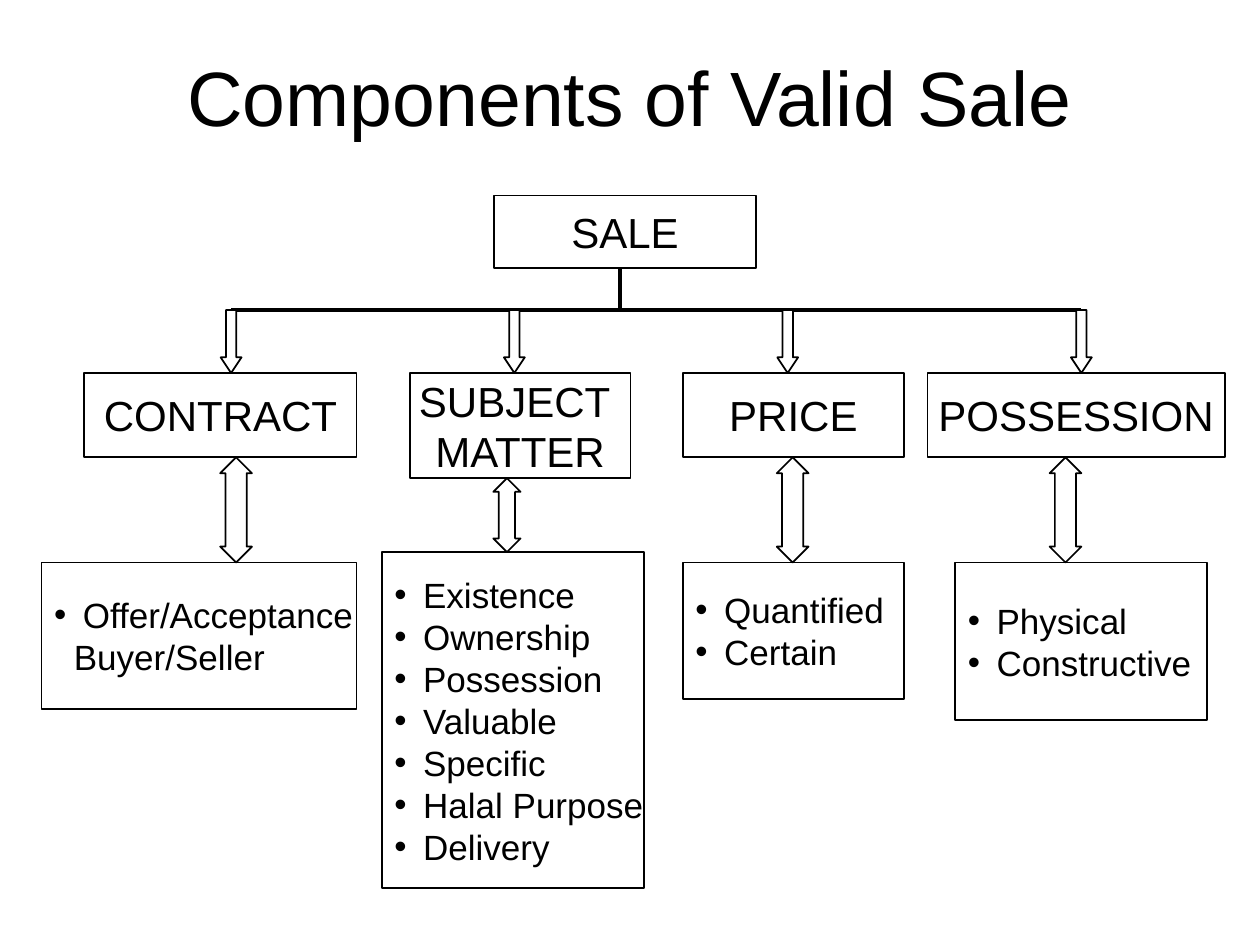
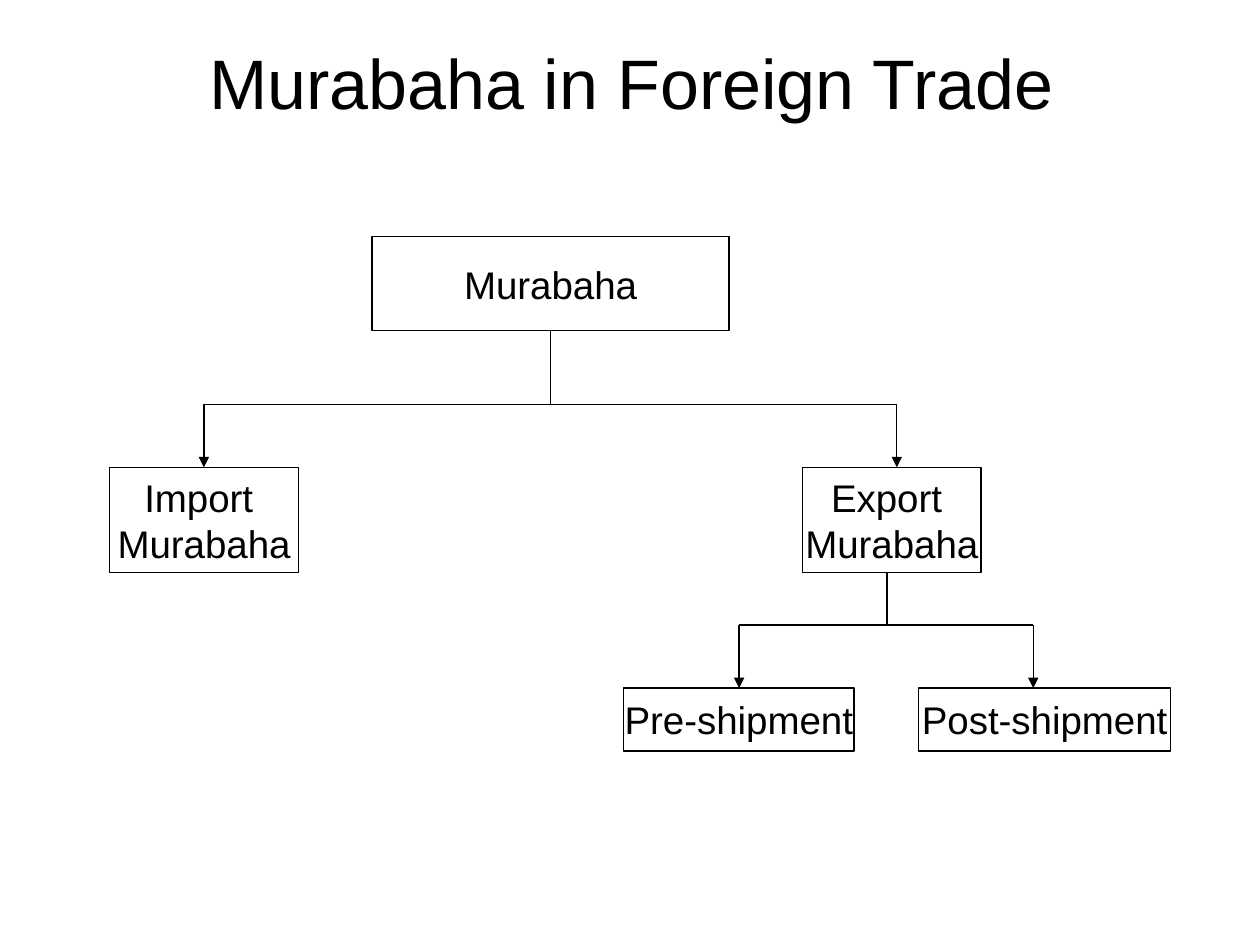
from dataclasses import dataclass
from typing import NamedTuple

from lxml import etree
from pptx import Presentation
from pptx import util as u
from pptx.dml.color import RGBColor
from pptx.enum import shapes, text
from pptx.oxml import ns


@dataclass(frozen=True)
class Theme:
    font: str = "Arial"
    ink: RGBColor = RGBColor(0, 0, 0)
    paper: RGBColor = RGBColor(255, 255, 255)
    part_size: float = 24
    detail_size: float = 20
    trade_size: float = 22
    thin: float = 0.75
    outline: float = 1
    thick: float = 2.5


THEME = Theme()


class Box(NamedTuple):
    """A place on the slide, in centimetres."""
    left: float
    top: float
    width: float
    height: float

    @property
    def bottom(self) -> float:
        return self.top + self.height

    @property
    def lengths(self) -> list:
        return [u.Cm(value) for value in self]


class Item(NamedTuple):
    text: str
    bullet: bool = True


class Component(NamedTuple):
    heading: list[str]
    heading_box: Box
    drop_x: float
    details: list[Item]
    detail_box: Box
    link_x: float
    link_width: float = 0.64
    link_head: float = 0.667


class Branch(NamedTuple):
    lines: list[str]
    box: Box
    drop_x: float


# Text and drawing helpers
def write(frame, lines, *, size: float, align=text.PP_ALIGN.CENTER,
          wrap: bool = False, left_inset: float = 0) -> None:
    """Fill a text frame with plain lines or list items."""
    frame.word_wrap = wrap
    frame.vertical_anchor = text.MSO_ANCHOR.MIDDLE
    frame.margin_left = u.Cm(left_inset)
    frame.margin_right = frame.margin_top = frame.margin_bottom = 0
    for number, line in enumerate(lines):
        paragraph = frame.add_paragraph() if number else frame.paragraphs[0]
        paragraph.alignment = align
        if isinstance(line, Item):
            indent(paragraph, line.bullet)
            line = line.text
        run = paragraph.add_run()
        run.text = line
        run.font.name = THEME.font
        run.font.size = u.Pt(size)
        run.font.color.rgb = THEME.ink


def indent(paragraph, bullet: bool) -> None:
    """Hang a list item behind its bullet, or set in a line without one."""
    properties = paragraph._p.get_or_add_pPr()
    margin = u.Cm(0.58 if bullet else 0.4)
    properties.set("marL", str(int(margin)))
    properties.set("indent", str(-int(margin) if bullet else 0))
    if bullet:
        etree.SubElement(properties, ns.qn("a:buFont"), typeface=THEME.font)
        etree.SubElement(properties, ns.qn("a:buChar"), char="•")


def draw_shape(slide, kind, box: Box, line_width: float = THEME.outline):
    shape = slide.shapes.add_shape(kind, *box.lengths)
    shape.shadow.inherit = False
    shape.fill.solid()
    shape.fill.fore_color.rgb = THEME.paper
    shape.line.color.rgb = THEME.ink
    shape.line.width = u.Pt(line_width)
    return shape


def draw_box(slide, box: Box, lines, line_width: float = THEME.outline,
             **text_format) -> None:
    shape = draw_shape(slide, shapes.MSO_SHAPE.RECTANGLE, box, line_width)
    write(shape.text_frame, lines, **text_format)


def draw_arrow(slide, kind, center: float, top: float, bottom: float,
               width: float, head: float) -> None:
    arrow = draw_shape(slide, kind, Box(center - width / 2, top, width, bottom - top))
    arrow.adjustments[0] = 0.5
    arrow.adjustments[1] = head


def draw_line(slide, x1: float, y1: float, x2: float, y2: float,
              width: float = THEME.thin, arrow: bool = False) -> None:
    line = slide.shapes.add_connector(
        shapes.MSO_CONNECTOR.STRAIGHT, *(u.Cm(v) for v in (x1, y1, x2, y2)))
    line.line.color.rgb = THEME.ink
    line.line.width = u.Pt(width)
    if arrow:
        etree.SubElement(line.line._get_or_add_ln(), ns.qn("a:tailEnd"), type="triangle")
    etree.SubElement(line._element.spPr, ns.qn("a:effectLst"))


def add_titled_slide(deck, title: str, box: Box, size: float):
    slide = deck.slides.add_slide(deck.slide_layouts[6])
    heading = slide.shapes.add_textbox(*box.lengths)
    write(heading.text_frame, [title], size=size, wrap=True)
    return slide


# Slide 1: the four components of a sale
HEAD_TOP = 7.52
DETAIL_TOP = 11.34
COMPONENTS = [
    Component(["CONTRACT"], Box(1.7, HEAD_TOP, 5.49, 1.7), 4.66,
              [Item("Offer/Acceptance"), Item("Buyer/Seller", bullet=False)],
              Box(0.84, DETAIL_TOP, 6.35, 2.96), 4.76),
    Component(["SUBJECT ", "MATTER"], Box(8.26, HEAD_TOP, 4.45, 2.12), 10.37,
              [Item(name) for name in ("Existence", "Ownership", "Possession", "Valuable",
                                       "Specific", "Halal Purpose", "Delivery")],
              Box(7.7, 11.13, 5.28, 6.78), 10.22, link_width=0.55, link_head=0.6),
    Component(["PRICE"], Box(13.77, HEAD_TOP, 4.45, 1.7), 15.88,
              [Item("Quantified"), Item("Certain")],
              Box(13.77, DETAIL_TOP, 4.45, 2.75), 15.98),
    Component(["POSSESSION"], Box(18.7, HEAD_TOP, 5.99, 1.7), 21.8,
              [Item("Physical"), Item("Constructive")],
              Box(19.26, DETAIL_TOP, 5.08, 3.18), 21.48),
]


def build_components(deck) -> None:
    slide = add_titled_slide(deck, "Components of Valid Sale",
                             Box(1.27, 0.33, 22.86, 3.18), 44)
    sale = Box(9.96, 3.94, 5.28, 1.47)
    rail_y, trunk_x = 6.25, 12.5
    draw_box(slide, sale, ["SALE"], size=THEME.part_size)
    draw_line(slide, trunk_x, sale.bottom, trunk_x, rail_y, THEME.thick)
    draw_line(slide, COMPONENTS[0].drop_x, rail_y, COMPONENTS[-1].drop_x, rail_y, THEME.thick)
    for part in COMPONENTS:
        draw_box(slide, part.heading_box, part.heading, size=THEME.part_size)
        draw_box(slide, part.detail_box, part.details, size=THEME.detail_size,
                 align=text.PP_ALIGN.LEFT, wrap=True, left_inset=0.25)
        draw_arrow(slide, shapes.MSO_SHAPE.DOWN_ARROW, part.drop_x,
                   rail_y, part.heading_box.top, 0.42, 0.75)
        draw_arrow(slide, shapes.MSO_SHAPE.UP_DOWN_ARROW, part.link_x,
                   part.heading_box.bottom, part.detail_box.top,
                   part.link_width, part.link_head)


# Slide 2: the tree of foreign trade
def draw_fork(slide, trunk_x: float, trunk_top: float, rail_y: float,
              branches: list[Branch]) -> None:
    draw_line(slide, trunk_x, trunk_top, trunk_x, rail_y)
    draw_line(slide, branches[0].drop_x, rail_y, branches[-1].drop_x, rail_y)
    for branch in branches:
        draw_box(slide, branch.box, branch.lines, THEME.thin, size=THEME.trade_size)
        draw_line(slide, branch.drop_x, rail_y, branch.drop_x, branch.box.top, arrow=True)


def build_foreign_trade(deck) -> None:
    slide = add_titled_slide(deck, "Murabaha in Foreign Trade",
                             Box(1.5, 0.53, 22.45, 2.21), 40)
    murabaha = Box(7.5, 4.77, 7.2, 1.9)
    trade = [Branch(["Import ", "Murabaha"], Box(2.21, 9.42, 3.81, 2.12), 4.11),
             Branch(["Export ", "Murabaha"], Box(16.18, 9.42, 3.6, 2.12), 18.08)]
    shipment = [Branch(["Pre-shipment"], Box(12.57, 13.87, 4.65, 1.27), 14.9),
                Branch(["Post-shipment"], Box(18.52, 13.87, 5.08, 1.27), 20.83)]
    draw_box(slide, murabaha, ["Murabaha"], THEME.thin, size=THEME.trade_size)
    draw_fork(slide, 11.1, murabaha.bottom, 8.15, trade)
    draw_fork(slide, 17.88, trade[-1].box.bottom, 12.6, shipment)


def main() -> None:
    deck = Presentation()
    deck.slide_width, deck.slide_height = u.Cm(25.4), u.Cm(19.05)
    build_components(deck)
    build_foreign_trade(deck)
    deck.save("out.pptx")


if __name__ == "__main__":
    main()
